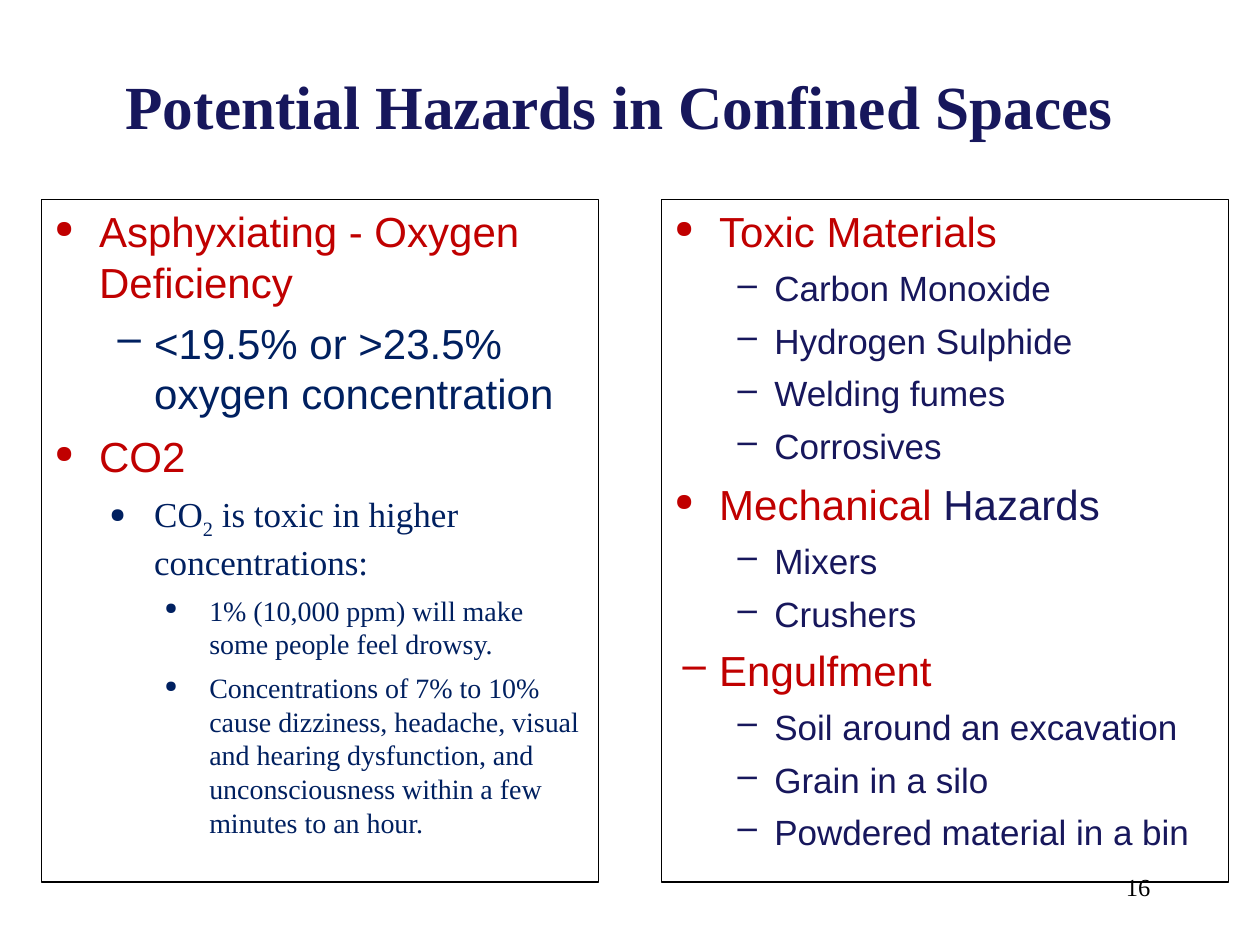
from lxml import etree
from pptx import Presentation
from pptx.dml.color import RGBColor
from pptx.enum.shapes import MSO_SHAPE
from pptx.enum.text import MSO_ANCHOR, PP_ALIGN
from pptx.oxml.ns import qn
from pptx.util import Cm, Pt

RECTANGLE = MSO_SHAPE.RECTANGLE
TOP, MIDDLE = MSO_ANCHOR.TOP, MSO_ANCHOR.MIDDLE
LEFT, CENTER, RIGHT = PP_ALIGN.LEFT, PP_ALIGN.CENTER, PP_ALIGN.RIGHT

THEME = {
    "sans": "Arial", "serif": "Times New Roman",
    "navy": "17175C", "blue": "002060", "red": "C00000",
    "black": "000000", "white": "FFFFFF",
    "title": 35, "large": 24, "medium": 20, "small": 16, "number": 14,
}

TITLE = "Potential Hazards in Confined Spaces"
PAGE_NUMBER = "16"

STYLES = {
    "heading": {"level": 0, "bullet": "●", "hang": 0.9, "before": 7,
                "size": "large", "font": "sans", "color": "red"},
    "dash heading": {"level": 0, "bullet": "–", "hang": 0.74, "before": 6,
                     "size": "large", "font": "sans", "color": "red"},
    "limit": {"level": 1, "bullet": "–", "hang": 0.74, "before": 6,
              "size": "large", "font": "sans", "color": "blue"},
    "item": {"level": 1, "bullet": "–", "hang": 0.74, "before": 6,
             "size": "medium", "font": "sans", "color": "navy"},
    "fact": {"level": 1, "bullet": "●", "hang": 0.9, "before": 7,
             "size": "medium", "font": "serif", "color": "blue"},
    "detail": {"level": 2, "bullet": "●", "hang": 0.9, "before": 6,
               "size": "small", "font": "serif", "color": "blue"},
}

ATMOSPHERE = [
    ("heading", [("Asphyxiating - Oxygen Deficiency", {})]),
    ("limit", [("<19.5% or >23.5% oxygen concentration", {})]),
    ("heading", [("CO2", {})]),
    ("fact", [("CO", {}), ("2", {"baseline": -25000}),
              (" is toxic in higher concentrations:", {})]),
    ("detail", [("1% (10,000 ppm) will make some people feel drowsy.", {})]),
    ("detail", [("Concentrations of 7% to 10% cause dizziness, headache, visual and "
                 "hearing dysfunction, and unconsciousness within a few minutes to "
                 "an hour.", {})]),
]
OTHER_HAZARDS = [
    ("heading", [("Toxic Materials", {})]),
    ("item", [("Carbon Monoxide", {})]),
    ("item", [("Hydrogen Sulphide", {})]),
    ("item", [("Welding fumes", {})]),
    ("item", [("Corrosives", {})]),
    ("heading", [("Mechanical ", {}), ("Hazards", {"color": "navy"})]),
    ("item", [("Mixers", {})]),
    ("item", [("Crushers", {})]),
    ("dash heading", [("Engulfment", {})]),
    ("item", [("Soil around an excavation", {})]),
    ("item", [("Grain in a silo", {})]),
    ("item", [("Powdered material in a bin", {})]),
]

PANEL_TOP, PANEL_HEIGHT = 4.02, 13.76
PANELS = [(0.84, 11.22, ATMOSPHERE), (13.34, 11.42, OTHER_HAZARDS)]
FIRST_INDENT, INDENT_STEP = 0.91, 1.11


def rgb(name):
    return RGBColor.from_string(THEME[name])


def prepare_frame(shape, anchor):
    frame = shape.text_frame
    frame.word_wrap = True
    frame.vertical_anchor = anchor
    frame.margin_left = frame.margin_right = Cm(0.25)
    frame.margin_top = frame.margin_bottom = Cm(0.13)
    return frame


def add_run(paragraph, text, size, font, color, bold=False, baseline=0):
    run = paragraph.add_run()
    run.text = text
    run.font.size = Pt(THEME[size])
    run.font.name = THEME[font]
    run.font.bold = bold
    run.font.color.rgb = rgb(color)
    if baseline:
        run.font._element.set("baseline", str(baseline))


def add_bullet(paragraph, style):
    properties = paragraph._p.get_or_add_pPr()
    margin = FIRST_INDENT + INDENT_STEP * style["level"]
    properties.set("marL", str(Cm(margin)))
    properties.set("indent", str(-Cm(style["hang"])))
    if style["bullet"] == "●":
        etree.SubElement(properties, qn("a:buSzPct"), val="58000")
    etree.SubElement(properties, qn("a:buChar"), char=style["bullet"])


def add_panel(slide, left, width, entries):
    panel = slide.shapes.add_shape(
        RECTANGLE, Cm(left), Cm(PANEL_TOP), Cm(width), Cm(PANEL_HEIGHT))
    panel.shadow.inherit = False
    panel.fill.solid()
    panel.fill.fore_color.rgb = rgb("white")
    panel.line.color.rgb = rgb("black")
    panel.line.width = Pt(0.75)
    frame = prepare_frame(panel, TOP)
    for index, (style_name, runs) in enumerate(entries):
        style = STYLES[style_name]
        paragraph = frame.add_paragraph() if index else frame.paragraphs[0]
        add_bullet(paragraph, style)
        paragraph.level = style["level"]
        paragraph.alignment = LEFT
        paragraph.space_before = Pt(style["before"] if index else 0)
        base = {key: style[key] for key in ("size", "font", "color")}
        for text, changes in runs:
            add_run(paragraph, text, **{**base, **changes})


def add_line(shape, text, alignment, size, color, bold=False):
    paragraph = prepare_frame(shape, MIDDLE).paragraphs[0]
    paragraph.alignment = alignment
    add_run(paragraph, text, size, "serif", color, bold)


def main():
    presentation = Presentation()
    presentation.slide_width, presentation.slide_height = Cm(25.4), Cm(19.05)
    slide = presentation.slides.add_slide(presentation.slide_layouts[5])

    title = slide.shapes.title
    title.left, title.top, title.width, title.height = (
        Cm(0.64), Cm(0.84), Cm(23.7), Cm(2.54))
    add_line(title, TITLE, CENTER, "title", "navy", bold=True)

    for left, width, entries in PANELS:
        add_panel(slide, left, width, entries)

    number = slide.shapes.add_textbox(Cm(18.21), Cm(17.27), Cm(5.23), Cm(1.22))
    add_line(number, PAGE_NUMBER, RIGHT, "number", "black")
    presentation.save("out.pptx")


if __name__ == "__main__":
    main()
